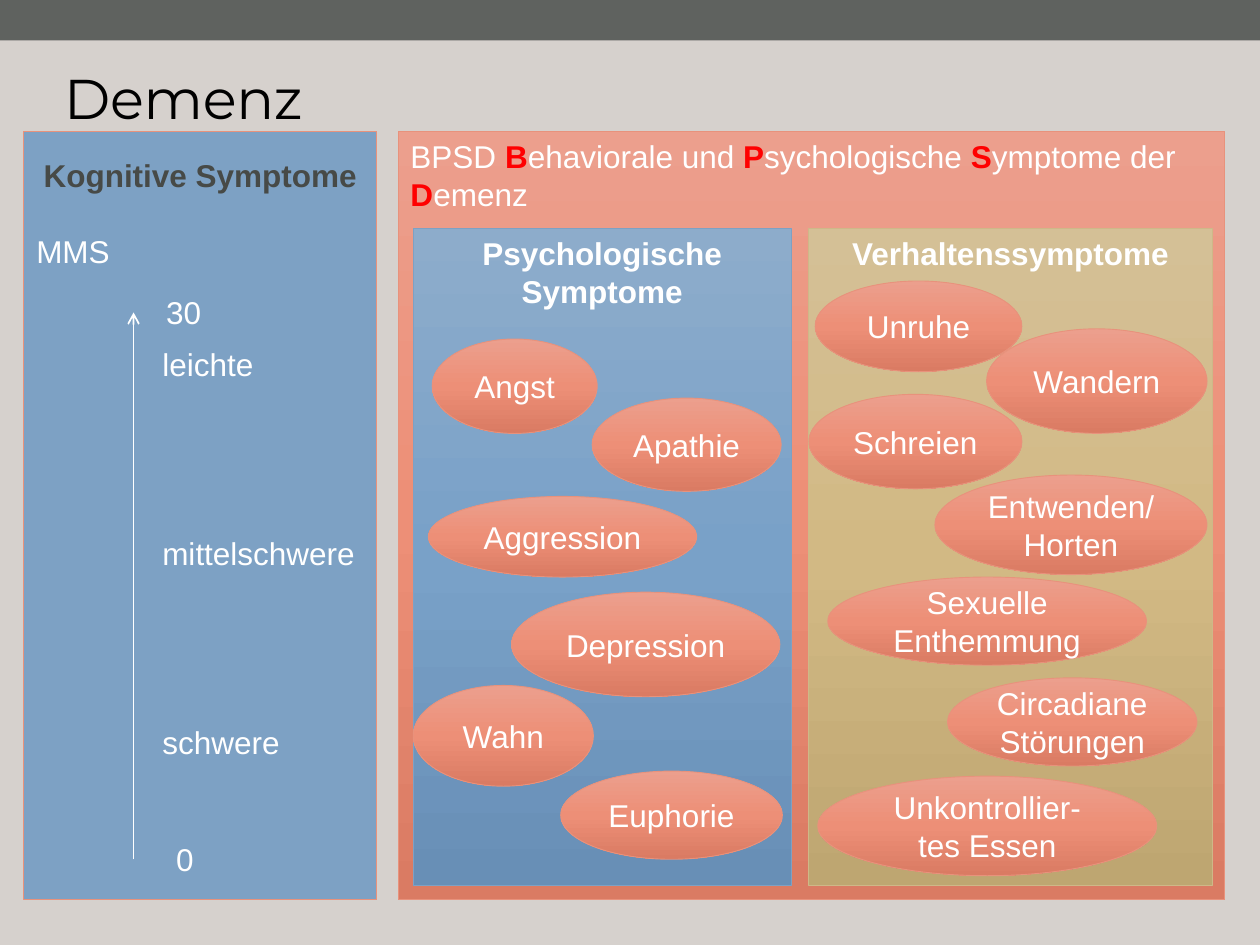
import copy
import pptx
import pptx.dml.color
import pptx.enum.shapes
import pptx.enum.text
import pptx.oxml
import pptx.oxml.ns
import pptx.util

Inches, Pt = pptx.util.Inches, pptx.util.Pt
qn = pptx.oxml.ns.qn
RGB = pptx.dml.color.RGBColor.from_string
KIND = pptx.enum.shapes.MSO_SHAPE
ALIGN = pptx.enum.text.PP_ALIGN
ANCHOR = pptx.enum.text.MSO_ANCHOR

HUES = {"back": "D6D1CD", "bar": "5F625F", "white": "FFFFFF", "black": "000000",
        "dark": "474A47", "red": "FF0000", "blue": "7DA1C4", "coral": "E8927C",
        "sand": "CEB888"}
FADES = {"coral": ("EC9F8D", "ED8F77", "DA7B63"),
         "blue": ("8DACCB", "79A1C8", "688FB6"),
         "sand": ("D4C096", "D2B984", "BEA671")}
FONT = {"name": "Arial", "size": Pt(18), "bold": False}
PITCH = 21.6


def block(kind, box, line=None, fill=None, fade=None):
    """Add a shape with a plain fill or a three-stop downward gradient."""
    shape = slide.shapes.add_shape(kind, *map(Inches, box))
    shape.shadow.inherit = False
    if fade:
        shape.fill.gradient()
        shape.fill.gradient_angle = 270
        stops = shape._element.spPr.find(".//" + qn("a:gsLst"))
        stops.insert(1, copy.deepcopy(stops[0]))
        for i, stop in enumerate(shape.fill.gradient_stops):
            stop.position = i / 2
            stop.color.rgb = RGB(FADES[fade][i])
    else:
        shape.fill.solid()
        shape.fill.fore_color.rgb = RGB(HUES[fill])
    if line:
        shape.line.color.rgb = RGB(HUES[line])
        shape.line.width = Pt(0.5)
    else:
        shape.line.fill.background()
    shape.text_frame.word_wrap = True
    shape.text_frame.vertical_anchor = ANCHOR.TOP
    return shape


def write(par, runs, align=ALIGN.LEFT, pitch=PITCH):
    """Fill a paragraph with runs of (text, hue, font changes)."""
    par.alignment = align
    par.line_spacing = Pt(pitch)
    for text, hue, more in runs:
        run = par.add_run()
        run.text = text
        for key, value in {**FONT, **more}.items():
            setattr(run.font, key, value)
        run.font.color.rgb = RGB(HUES[hue])


deck = pptx.Presentation()
deck.slide_width, deck.slide_height = Inches(10), Inches(7.5)
slide = deck.slides.add_slide(deck.slide_layouts[6])
slide.background.fill.solid()
slide.background.fill.fore_color.rgb = RGB(HUES["back"])
block(KIND.RECTANGLE, (0, 0, 10, 0.32), fill="bar")

# Title
title = slide.shapes.add_textbox(Inches(0.51), Inches(0.42), Inches(9), Inches(0.62))
frame = title.text_frame
frame.word_wrap = True
frame.vertical_anchor = ANCHOR.BOTTOM
for side in ("left", "right", "top", "bottom"):
    setattr(frame, "margin_" + side, 0)
write(frame.paragraphs[0],
      [("Demenz", "black", {"name": "Montserrat", "size": Pt(32)})], pitch=36)
frame.paragraphs[0].runs[0].font._element.set("spc", "-20")

# Cognitive symptoms: text, hue, bold, lines of space before, indent
frame = block(KIND.RECTANGLE, (0.19, 1.04, 2.8, 6.1), "coral", "blue").text_frame
frame.margin_top = Inches(0.2)
rows = [("Kognitive Symptome", "dark", True, 0, 0),
        ("MMS", "white", False, 1, 0),
        ("leichte", "white", False, 2, 1),
        ("mittelschwere", "white", False, 4, 1),
        ("schwere", "white", False, 4, 1)]
for i, (text, hue, bold, gap, dent) in enumerate(rows):
    par = frame.add_paragraph() if i else frame.paragraphs[0]
    write(par, [(text, hue, {"bold": bold})], ALIGN.LEFT if i else ALIGN.CENTER)
    if gap:
        par.space_before = Pt(gap * PITCH)
    if dent:
        par._p.get_or_add_pPr().set("marL", str(Inches(dent)))

# Score scale
scale = slide.shapes.add_connector(
    pptx.enum.shapes.MSO_CONNECTOR.STRAIGHT,
    Inches(1.06), Inches(6.82), Inches(1.06), Inches(2.48))
scale.line.color.rgb = RGB(HUES["white"])
scale.line.width = Pt(1)
head = pptx.oxml.parse_xml(
    f'<a:tailEnd {pptx.oxml.ns.nsdecls("a")} type="arrow"/>')
scale.line._get_or_add_ln().append(head)
scale._element.spPr.append(
    pptx.oxml.parse_xml(f'<a:effectLst {pptx.oxml.ns.nsdecls("a")}/>'))
for text, x, y in [("30", 1.22, 2.28), ("0", 1.3, 6.62)]:
    mark = slide.shapes.add_textbox(Inches(x), Inches(y), Inches(0.5), Inches(0.4))
    mark.text_frame.word_wrap = True
    write(mark.text_frame.paragraphs[0], [(text, "white", {})])

# BPSD panel with red initials
panel = block(KIND.RECTANGLE, (3.16, 1.04, 6.56, 6.1), "coral", fade="coral")
runs = [("BPSD ", "white", {})]
for first, rest in [("B", "ehaviorale und "), ("P", "sychologische "),
                    ("S", "ymptome der "), ("D", "emenz")]:
    runs += [(first, "red", {"bold": True}), (rest, "white", {})]
write(panel.text_frame.paragraphs[0], runs)

for text, x, wide, hue in [("Psychologische Symptome", 3.28, 3, "blue"),
                           ("Verhaltenssymptome", 6.42, 3.2, "sand")]:
    group = block(KIND.RECTANGLE, (x, 1.81, wide, 5.22), hue, fade=hue)
    write(group.text_frame.paragraphs[0],
          [(text, "white", {"bold": True})], ALIGN.CENTER)

# Single symptoms
signs = [("Angst", 3.43, 2.69, 1.31, 0.75),
         ("Depression", 4.06, 4.7, 2.13, 0.83),
         ("Wahn", 3.28, 5.44, 1.43, 0.8),
         ("Euphorie", 4.45, 6.12, 1.76, 0.7),
         ("Aggression", 3.4, 3.94, 2.13, 0.64),
         ("Unruhe", 6.47, 2.23, 1.64, 0.72),
         ("Wandern", 7.83, 2.61, 1.75, 0.83),
         ("Schreien", 6.42, 3.13, 1.69, 0.75),
         ("Entwenden/ Horten", 7.42, 3.77, 2.16, 0.79),
         ("Sexuelle Enthemmung", 6.57, 4.58, 2.53, 0.7),
         ("Circadiane Störungen", 7.52, 5.38, 1.98, 0.7),
         ("Unkontrollier-tes Essen", 6.49, 6.16, 2.69, 0.79),
         ("Apathie", 4.7, 3.16, 1.5, 0.74)]
for text, *box in signs:
    sign = block(KIND.OVAL, box, "coral", fade="coral")
    sign.text_frame.vertical_anchor = ANCHOR.MIDDLE
    write(sign.text_frame.paragraphs[0], [(text, "white", {})], ALIGN.CENTER)

deck.save("out.pptx")
